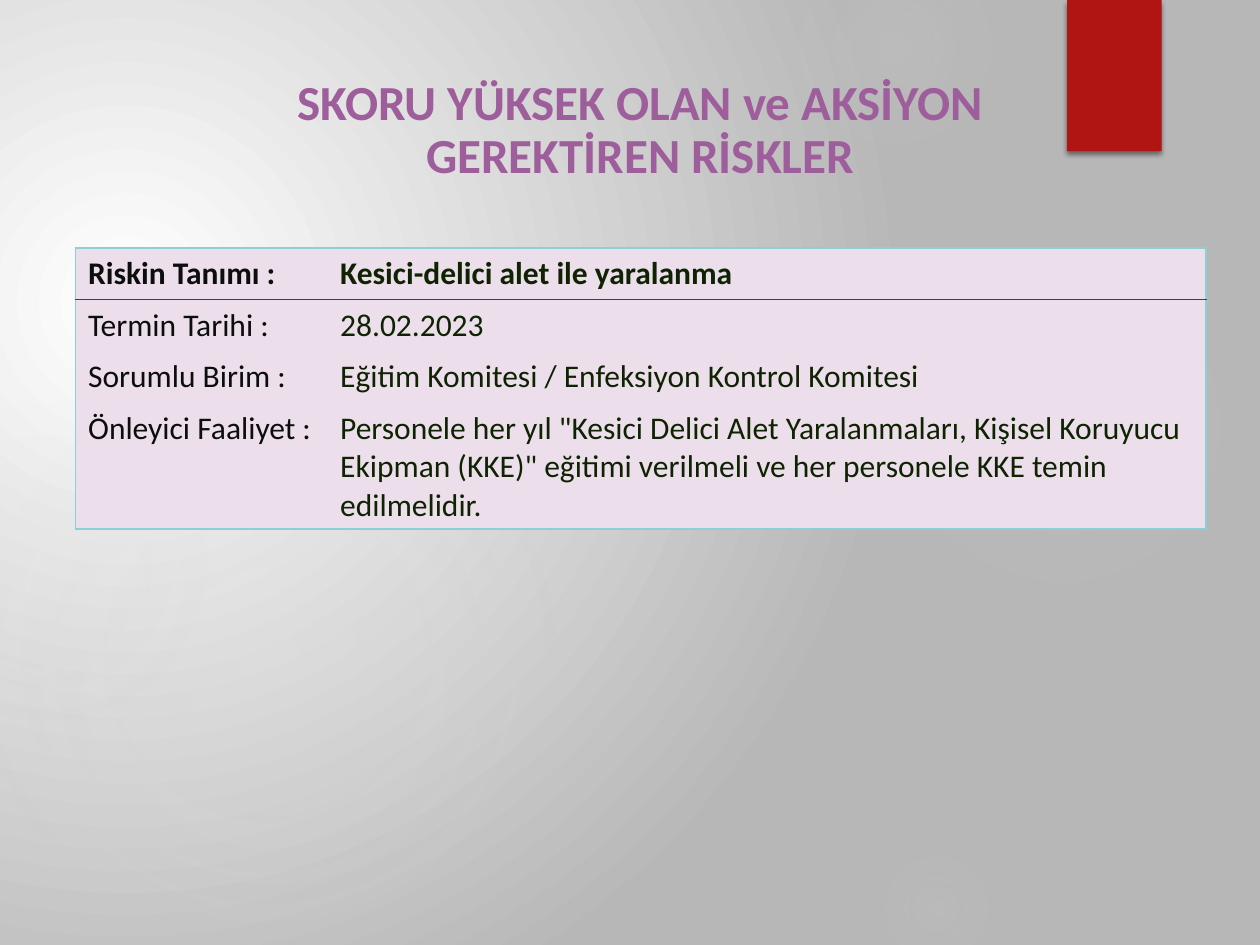
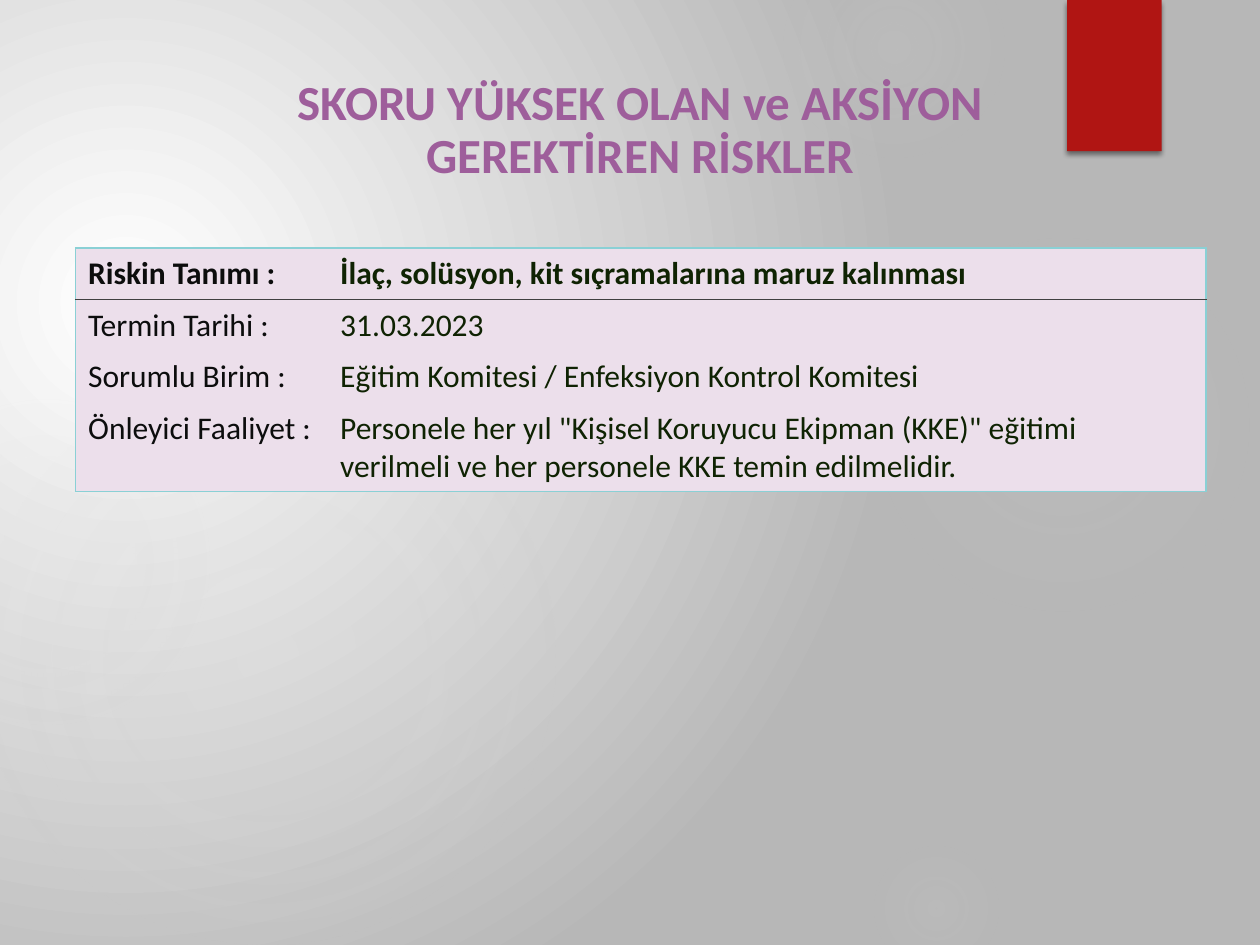
"""Builds two slides that list high-score risks and the action each one needs."""
from lxml.etree import SubElement
from pptx import Presentation
from pptx.dml.color import RGBColor
from pptx.enum.shapes import MSO_SHAPE
from pptx.enum.text import MSO_ANCHOR, PP_ALIGN
from pptx.oxml import parse_xml
from pptx.oxml.ns import nsdecls, qn
from pptx.util import Inches, Pt

FONT = "Calibri"
RED, PURPLE, TEAL, LILAC = "B01513", "9E5E9B", "8AD0D5", "ECDFEB"
LABEL_COLOR, VALUE_COLOR, RULE_COLOR = "0C0D0D", "0F2303", "404040"
NO_TABLE_STYLE = "{2D5ABB26-0587-4C30-8999-92F81FD0307C}"
TITLE = "SKORU YÜKSEK OLAN ve AKSİYON GEREKTİREN RİSKLER"
LABELS = ["Riskin Tanımı :", "Termin Tarihi :", "Sorumlu Birim :", "Önleyici Faaliyet :"]
COLUMN_WIDTHS = [2, 6.97]
ROW_HEIGHT = 0.41

GLOWS = [
    (6.89, 1.83, 3.08, [(0, 7), (36, 6), (69, 0)]),
    (6.22, -0.5, 1.75, [(0, 14), (36, 7), (73, 0)]),
    (6.89, 6.67, 1.08, [(0, 9), (36, 5), (66, 0)]),
    (-0.17, 2.92, 4.58, [(0, 11), (36, 10), (75, 0)]),
    (-0.92, 3.17, 2.58, [(0, 8), (36, 8), (72, 0)]),
]

RISKS = [
    (2.22, [
        "Kesici-delici alet ile yaralanma",
        "28.02.2023",
        "Eğitim Komitesi / Enfeksiyon Kontrol Komitesi",
        'Personele her yıl "Kesici Delici Alet Yaralanmaları, Kişisel Koruyucu '
        'Ekipman (KKE)" eğitimi verilmeli ve her personele KKE temin edilmelidir.',
    ]),
    (1.92, [
        "İlaç, solüsyon, kit sıçramalarına maruz kalınması",
        "31.03.2023",
        "Eğitim Komitesi / Enfeksiyon Kontrol Komitesi",
        'Personele her yıl "Kişisel Koruyucu Ekipman (KKE)" eğitimi verilmeli '
        "ve her personele KKE temin edilmelidir.",
    ]),
]


def color(hex_text):
    return RGBColor.from_string(hex_text)


def radial_fill(owner, stops, left, top, right, bottom):
    solid = owner.find(".//" + qn("a:solidFill"))
    stop_xml = "".join(
        f'<a:gs pos="{position * 1000}"><a:srgbClr val="{shade}">'
        f'<a:alpha val="{opacity * 1000}"/></a:srgbClr></a:gs>'
        for position, shade, opacity in stops
    )
    gradient = parse_xml(
        f'<a:gradFill {nsdecls("a")} rotWithShape="1"><a:gsLst>{stop_xml}</a:gsLst>'
        f'<a:path path="circle"><a:fillToRect l="{left * 1000}" t="{top * 1000}" '
        f'r="{right * 1000}" b="{bottom * 1000}"/></a:path></a:gradFill>'
    )
    solid.getparent().replace(solid, gradient)


deck = Presentation()
deck.slide_width, deck.slide_height = Inches(10), Inches(7.5)
master = deck.slide_master
master.background.fill.solid()
radial_fill(master.element.find(".//" + qn("p:bgPr")),
            [(0, "FFFFFF", 100), (100, "B7B7B7", 100)], 45, 65, 125, 100)

for table_height, values in RISKS:
    page = deck.slides.add_slide(deck.slide_layouts[6])

    for left, top, size, fades in GLOWS:
        glow = page.shapes.add_shape(MSO_SHAPE.OVAL, Inches(left), Inches(top),
                                     Inches(size), Inches(size))
        glow.shadow.inherit = False
        glow.line.fill.background()
        glow.fill.solid()
        radial_fill(glow.element.spPr,
                    [(position, "D9D9D9", opacity) for position, opacity in fades],
                    50, 50, 50, 50)

    ribbon = page.shapes.add_shape(MSO_SHAPE.RECTANGLE, Inches(8.47), 0,
                                   Inches(0.75), Inches(1.2))
    ribbon.fill.solid()
    ribbon.fill.fore_color.rgb = color(RED)
    ribbon.line.fill.background()
    ribbon.shadow.inherit = False
    effects = ribbon.element.spPr.find(qn("a:effectLst"))
    shadow = SubElement(effects, qn("a:outerShdw"), blurRad=str(Pt(3)), dist=str(Pt(2)),
                        dir="5400000", algn="ctr", rotWithShape="0")
    shade = SubElement(shadow, qn("a:srgbClr"), val="000000")
    SubElement(shade, qn("a:alpha"), val="45000")

    title_box = page.shapes.add_textbox(Inches(2.2), Inches(0.58), Inches(5.76), Inches(0.93))
    title_box.text_frame.word_wrap = True
    title_box.text_frame.vertical_anchor = MSO_ANCHOR.BOTTOM
    title_box.text_frame.text = TITLE
    para = title_box.text_frame.paragraphs[0]
    para.alignment = PP_ALIGN.CENTER
    para.line_spacing = 0.9
    para.space_after = Pt(6)
    span = para.runs[0]
    span.font.name, span.font.size, span.font.bold = FONT, Pt(28), True
    span.font.color.rgb = color(PURPLE)

    frame = page.shapes.add_table(len(LABELS), 2, Inches(0.6), Inches(1.97),
                                  Inches(sum(COLUMN_WIDTHS)), Inches(table_height))
    table = frame.table
    table.first_row = table.horz_banding = False
    frame.element.find(".//" + qn("a:tableStyleId")).text = NO_TABLE_STYLE
    for column, width in zip(table.columns, COLUMN_WIDTHS):
        column.width = Inches(width)

    last = len(LABELS) - 1
    for row_index, texts in enumerate(zip(LABELS, values)):
        height = table_height - last * ROW_HEIGHT if row_index == last else ROW_HEIGHT
        table.rows[row_index].height = Inches(height)
        for column_index, text in enumerate(texts):
            cell = table.cell(row_index, column_index)
            cell.text = text
            span = cell.text_frame.paragraphs[0].runs[0]
            span.font.name, span.font.size = FONT, Pt(18)
            span.font.bold = row_index == 0
            span.font.color.rgb = color([LABEL_COLOR, VALUE_COLOR][column_index])

            borders = [("a:lnL", TEAL, 1)] if column_index == 0 else [("a:lnR", TEAL, 1)]
            if row_index == 0:
                borders += [("a:lnT", TEAL, 1), ("a:lnB", RULE_COLOR, 0.5)]
            elif row_index == last:
                borders.append(("a:lnB", TEAL, 1))
            properties = cell._tc.get_or_add_tcPr()
            for side, border_color, points in borders:
                border = SubElement(properties, qn(side), w=str(Pt(points)))
                paint = SubElement(border, qn("a:solidFill"))
                SubElement(paint, qn("a:srgbClr"), val=border_color)
            cell.fill.solid()
            cell.fill.fore_color.rgb = color(LILAC)

deck.save("out.pptx")
